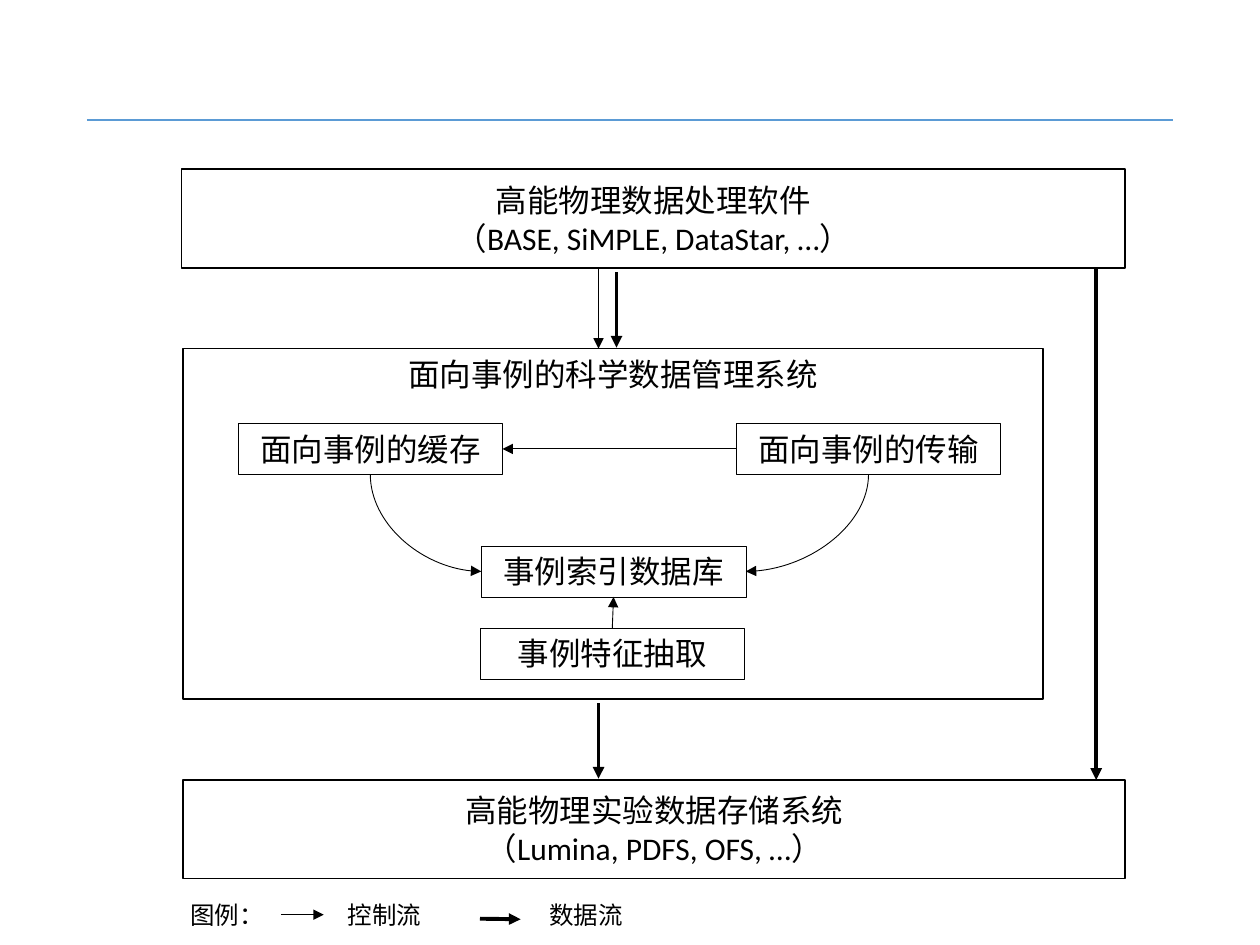
from dataclasses import dataclass

from lxml.etree import SubElement
from pptx import Presentation
from pptx.dml.color import RGBColor
from pptx.enum.shapes import MSO_CONNECTOR as CONN, MSO_SHAPE as SHAPE
from pptx.enum.text import MSO_ANCHOR as ANCHOR, MSO_AUTO_SIZE as FIT, PP_ALIGN as ALIGN
from pptx.oxml.ns import qn
from pptx.util import Pt

BLACK, WHITE, BLUE = "000000", "FFFFFF", "5B9BD5"
TOP, LEFT, BOTTOM, RIGHT = range(4)
CONTROL, DATA = 0.5, 2.25  # line widths of the two flows


@dataclass
class Box:
    text: str
    x: float
    y: float
    w: float
    h: float
    line: float = 1
    fill: str | None = WHITE
    anchor: ANCHOR = ANCHOR.MIDDLE
    fit: FIT = FIT.NONE


@dataclass
class Arrow:
    x1: float
    y1: float
    x2: float
    y2: float
    width: float


@dataclass
class Link:
    start: str
    start_side: int
    end: str
    end_side: int
    curved: bool = False


def module(text: str, x: float, y: float) -> Box:
    """A small box inside the management system."""
    return Box(text, x, y, 151.2, 29.1, 0.25, anchor=ANCHOR.TOP, fit=FIT.SHAPE_TO_FIT_TEXT)


BOXES = {
    "index": module("事例索引数据库", 275, 312),
    "extract": module("事例特征抽取", 274.3, 359),
    "cache": module("面向事例的缓存", 136, 242),
    "transfer": module("面向事例的传输", 420.7, 242),
    "software": Box("高能物理数据处理软件\n（BASE, SiMPLE, DataStar, …）", 103.7, 96.7, 539.3, 56.4),
    "manager": Box("面向事例的科学数据管理系统", 104.5, 199.2, 491.5, 200.3,
                   fill=None, anchor=ANCHOR.TOP),
    "storage": Box("高能物理实验数据存储系统\n（Lumina, PDFS, OFS, …）", 104.5, 445.7, 538.5, 56.4),
}
LINKS = [
    Link("cache", BOTTOM, "index", LEFT, curved=True),
    Link("extract", TOP, "index", BOTTOM),
    Link("transfer", LEFT, "cache", RIGHT),
    Link("transfer", BOTTOM, "index", RIGHT, curved=True),
]
ARROWS = [
    Arrow(342, 153.1, 342, 199.2, CONTROL),
    Arrow(626.4, 153.1, 626.4, 445.7, DATA),
    Arrow(342, 401.8, 342, 445, DATA),
    Arrow(352.3, 155.5, 352.3, 198.7, DATA),
    Arrow(160.5, 522.7, 185, 522.7, CONTROL),
    Arrow(274.3, 525, 297.5, 525.3, DATA),
]
LEGEND = {"图例：": 101.5, "控制流": 191.5, "数据流": 306.7}


def rgb(color: str) -> RGBColor:
    return RGBColor.from_string(color)


def write(tf, text: str, size: float, align: ALIGN, frame: dict) -> None:
    tf.text = text
    for name, value in frame.items():
        setattr(tf, name, value)
    for p in tf.paragraphs:
        p.alignment = align
        for r in p.runs:
            for name, value in {"name": "Calibri", "size": Pt(size)}.items():
                setattr(r.font, name, value)
            r.font.color.rgb = rgb(BLACK)


def draw_box(s, box: Box):
    sp = s.shapes.add_shape(SHAPE.RECTANGLE, Pt(box.x), Pt(box.y), Pt(box.w), Pt(box.h))
    sp.shadow.inherit = False
    if box.fill:
        sp.fill.solid()
        sp.fill.fore_color.rgb = rgb(box.fill)
    else:
        sp.fill.background()
    sp.line.color.rgb = rgb(BLACK)
    sp.line.width = Pt(box.line)
    write(sp.text_frame, box.text, 18, ALIGN.CENTER,
          {"vertical_anchor": box.anchor, "word_wrap": True, "auto_size": box.fit})
    return sp


def draw_line(s, line: Arrow, color: str = BLACK, head: bool = True, kind=CONN.STRAIGHT):
    cxn = s.shapes.add_connector(kind, Pt(line.x1), Pt(line.y1), Pt(line.x2), Pt(line.y2))
    cxn.line.color.rgb = rgb(color)
    cxn.line.width = Pt(line.width)
    if head:
        SubElement(cxn.line._get_or_add_ln(), qn("a:tailEnd"), type="triangle")
    SubElement(cxn._element.spPr, qn("a:effectLst"))
    return cxn


def bend_down_and_across(cxn) -> None:
    """Make the connector a quarter curve that leaves downwards and arrives sideways."""
    x1, y1, x2, y2 = cxn.begin_x, cxn.begin_y, cxn.end_x, cxn.end_y
    w, h = abs(y2 - y1), abs(x2 - x1)
    cxn.left, cxn.top = (x1 + x2 - w) // 2, (y1 + y2 - h) // 2
    cxn.width, cxn.height = w, h
    to_right = x2 > x1
    xfrm = cxn._element.spPr.find(qn("a:xfrm"))
    turn = {"rot": 270 * 60000 if to_right else 90 * 60000,
            "flipH": int(to_right), "flipV": 0}
    for name, value in turn.items():
        xfrm.set(name, str(value))
    cxn._element.spPr.find(qn("a:prstGeom")).set("prst", "curvedConnector2")


def draw_link(s, link: Link, shapes: dict) -> None:
    kind = CONN.CURVE if link.curved else CONN.STRAIGHT
    cxn = draw_line(s, Arrow(0, 0, 0, 0, CONTROL), kind=kind)
    cxn.begin_connect(shapes[link.start], link.start_side)
    cxn.end_connect(shapes[link.end], link.end_side)
    if link.curved:
        bend_down_and_across(cxn)


def main() -> None:
    prs = Presentation()
    prs.slide_width, prs.slide_height = Pt(720), Pt(540)
    s = prs.slides.add_slide(prs.slide_layouts[6])
    draw_line(s, Arrow(49.7, 68.5, 670.3, 68.5, 1), BLUE, head=False)
    shapes = {name: draw_box(s, box) for name, box in BOXES.items()}
    for link in LINKS:
        draw_link(s, link, shapes)
    for arrow in ARROWS:
        draw_line(s, arrow)
    for text, x in LEGEND.items():
        label = s.shapes.add_textbox(Pt(x), Pt(511), Pt(57), Pt(24.3))
        write(label.text_frame, text, 14, ALIGN.LEFT,
              {"word_wrap": False, "auto_size": FIT.SHAPE_TO_FIT_TEXT})
    prs.save("out.pptx")


if __name__ == "__main__":
    main()
